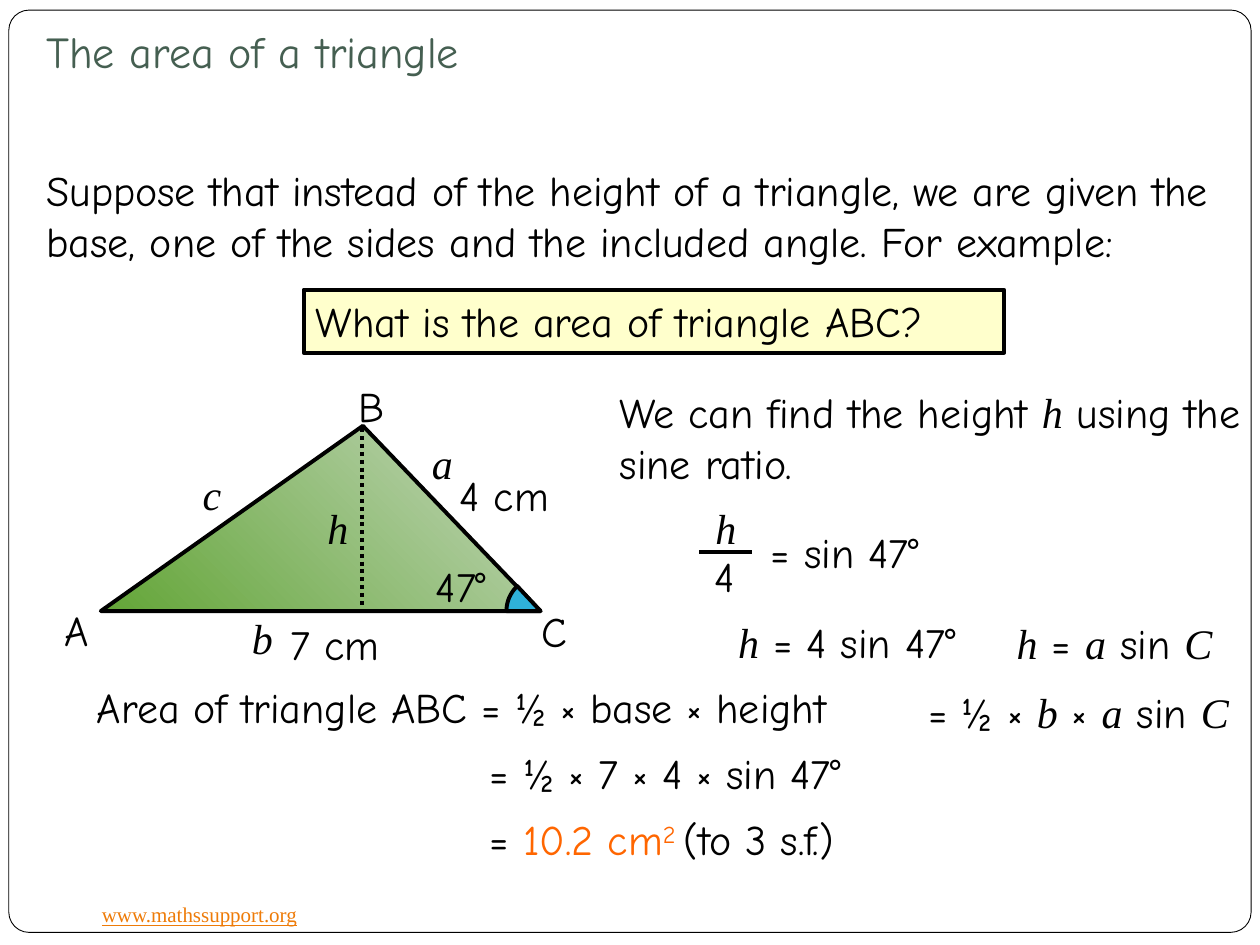
"""Build a slide on finding a triangle's area from two sides and the included angle."""
from math import cos, radians, sin

from lxml.etree import SubElement
from pptx import Presentation
from pptx.dml.color import RGBColor
from pptx.enum.dml import MSO_LINE
from pptx.enum.shapes import MSO_CONNECTOR as CONN, MSO_SHAPE as SHAPE
from pptx.enum.text import MSO_ANCHOR, MSO_AUTO_SIZE as AUTO, PP_ALIGN
from pptx.oxml.ns import qn
from pptx.util import Inches, Pt

BLACK, WHITE = RGBColor(0, 0, 0), RGBColor(255, 255, 255)
TEAL, ORANGE = RGBColor(0x45, 0x5F, 0x51), RGBColor(0xFF, 0x66, 0x00)
LINK, CREAM = RGBColor(0xEE, 0x7B, 0x08), RGBColor(0xFF, 0xFF, 0xCC)
GREEN, PALE = RGBColor(0x63, 0xA5, 0x37), RGBColor(0xC4, 0xD7, 0xBD)
BLUE = RGBColor(0x2F, 0xB1, 0xD9)
SANS, SERIF = "Comic Neue", "Times New Roman"

W, H = 10, 7.5
MARGIN = 0.27
FRAME = (0.07, 0.08, 9.86, 7.32)
QUESTION_BOX = (2.41, 2.3, 5.56, 0.5)
A, B, C = (0.8, 4.85), (2.88, 3.38), (4.29, 4.85)
ANGLE, RADIUS, STEPS = 47, 0.27, 12
LINES = [
    ((2.87, 3.4), (2.87, 4.82), MSO_LINE.ROUND_DOT),
    ((5.55, 4.38), (5.97, 4.38), None),
]
TITLE = "The area of a triangle"
INTRO = ("Suppose that instead of the height of a triangle, we are given the base, "
         "one of the sides and the included angle. For example:")
QUESTION = "What is the area of triangle ABC?"
METHOD = "We can find the height *h* using the sine ratio."
SITE = "www.mathssupport.org"
# Asterisks mark variables set in italic serif.
LABELS = [
    ("A", 0.41, 4.75, 0.45), ("B", 2.75, 2.97, 0.42), ("C", 4.2, 4.76, 0.4),
    ("7 cm", 2.21, 4.86, 0.94), ("4 cm", 3.55, 3.68, 0.94), ("47°", 3.36, 4.4, 0.75),
    ("*h*", 2.5, 3.94, 0.37), ("*a*", 3.33, 3.42, 0.37),
    ("*b*", 1.9, 4.81, 0.37), ("*c*", 1.51, 3.67, 0.35),
    ("*h*", 5.58, 3.94, 0.37), ("4", 5.57, 4.32, 0.41), ("= sin 47°", 6.02, 4.13, 1.55),
    ("*h* = 4 sin 47°", 5.76, 4.84, 2.23),
    ("*h* = *a* sin *C*", 7.97, 4.85, 1.87),
    ("Area of triangle ABC = ½ × base × height", 0.67, 5.36, 6.6),
    ("= ½ × *b* × *a* sin *C*", 7.27, 5.4, 2.78),
    ("= ½ × 7 × 4 × sin 47°", 3.79, 5.88, 3.47),
]
RESULT = [("= ", BLACK, 0), ("10.2 cm", ORANGE, 0), ("2 ", ORANGE, 30000),
          ("(to 3 s.f.)", BLACK, 0)]


def set_font(font, size=24, color=BLACK, name=SANS):
    font.size, font.name = Pt(size), name
    font.color.rgb = color


def write(sp, text):
    p = sp.text_frame.paragraphs[0]
    p.alignment = PP_ALIGN.LEFT
    set_font(p.font)
    for i, part in enumerate(text.split("*")):
        if part:
            r = p.add_run()
            r.text = part
            set_font(r.font, name=SERIF if i % 2 else SANS)
            r.font.italic = bool(i % 2)
    return p


def add_text(slide, text, x, y, w, h=0.5, wrap=False):
    sp = slide.shapes.add_textbox(*map(Inches, (x, y, w, h)))
    tf = sp.text_frame
    tf.word_wrap = wrap
    tf.auto_size = AUTO.SHAPE_TO_FIT_TEXT
    write(sp, text)
    return sp


def outline(sp, width=2.25, fill=None):
    sp.shadow.inherit = False
    sp.line.color.rgb, sp.line.width = BLACK, Pt(width)
    if fill is not None:
        sp.fill.solid()
        sp.fill.fore_color.rgb = fill


def add_polygon(slide, points):
    points = [tuple(map(Inches, point)) for point in points]
    builder = slide.shapes.build_freeform(*points[0])
    builder.add_line_segments(points[1:], close=True)
    return builder.convert_to_shape()


def add_line(slide, start, end, dash):
    line = slide.shapes.add_connector(CONN.STRAIGHT, *map(Inches, start + end))
    line.line.color.rgb, line.line.width = BLACK, Pt(2.25)
    if dash is not None:
        line.line.dash_style = dash
    SubElement(line._element.spPr, qn("a:effectLst"))


def add_triangle(slide):
    triangle = add_polygon(slide, [A, C, B])
    outline(triangle)
    triangle.fill.gradient()
    triangle.fill.gradient_angle = 45
    for stop, color in zip(triangle.fill.gradient_stops, (GREEN, PALE)):
        stop.color.rgb = color
    turns = [radians(ANGLE * i / STEPS) for i in range(STEPS + 1)]
    arc = [(C[0] - RADIUS * cos(t), C[1] - RADIUS * sin(t)) for t in turns]
    outline(add_polygon(slide, [C] + arc), fill=BLUE)


def add_result(slide):
    p = add_text(slide, "", 3.79, 6.41, 3.47).text_frame.paragraphs[0]
    for text, color, baseline in RESULT:
        r = p.add_run()
        r.text = text
        set_font(r.font, color=color)
        if baseline:
            r._r.get_or_add_rPr().set("baseline", str(baseline))


def main():
    prs = Presentation()
    prs.slide_width, prs.slide_height = Inches(W), Inches(H)
    slide = prs.slides.add_slide(prs.slide_layouts[6])

    frame = slide.shapes.add_shape(SHAPE.ROUNDED_RECTANGLE, *map(Inches, FRAME))
    frame.adjustments[0] = 0.022
    outline(frame, 0.5, WHITE)

    site = add_text(slide, SITE, 0.71, 7.11, 1.77, 0.3)
    font = site.text_frame.paragraphs[0].runs[0].font
    set_font(font, 12, LINK, SERIF)
    font.underline = True

    title = add_text(slide, TITLE, MARGIN, 0.16, 9, 0.55, wrap=True)
    tf = title.text_frame
    tf.auto_size, tf.vertical_anchor = AUTO.NONE, MSO_ANCHOR.BOTTOM
    tf.margin_bottom = Inches(0.1)
    set_font(tf.paragraphs[0].runs[0].font, 25.2, TEAL)

    add_text(slide, INTRO, MARGIN, 1.26, 9.6, 1.31, wrap=True)
    question = slide.shapes.add_shape(SHAPE.RECTANGLE, *map(Inches, QUESTION_BOX))
    outline(question, fill=CREAM)
    question.text_frame.vertical_anchor = MSO_ANCHOR.TOP
    write(question, QUESTION)

    add_triangle(slide)
    for line in LINES:
        add_line(slide, *line)
    add_text(slide, METHOD, 4.82, 3.02, 5.18, 0.91, wrap=True)
    for label in LABELS:
        add_text(slide, *label)
    add_result(slide)
    prs.save("out.pptx")


if __name__ == "__main__":
    main()
